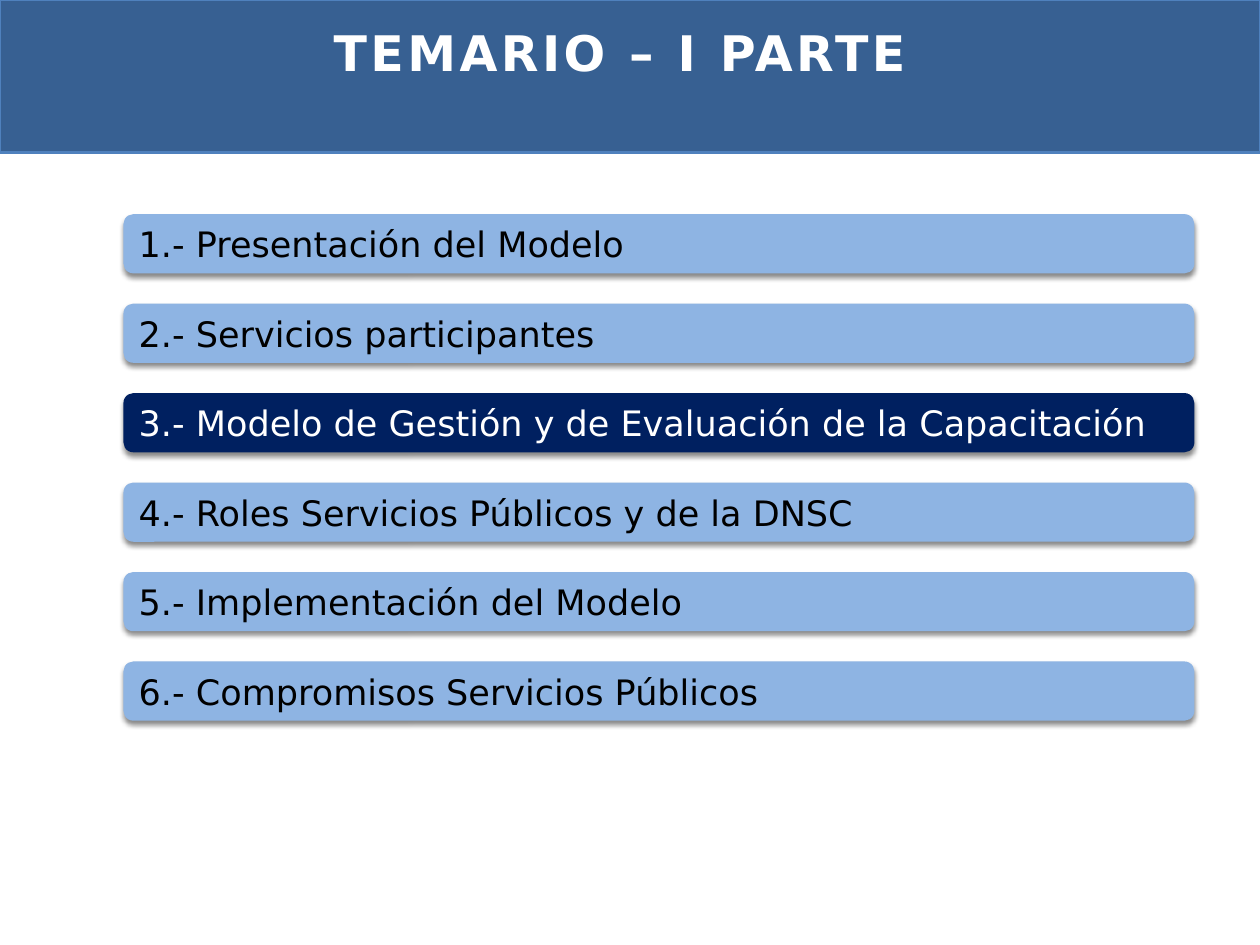
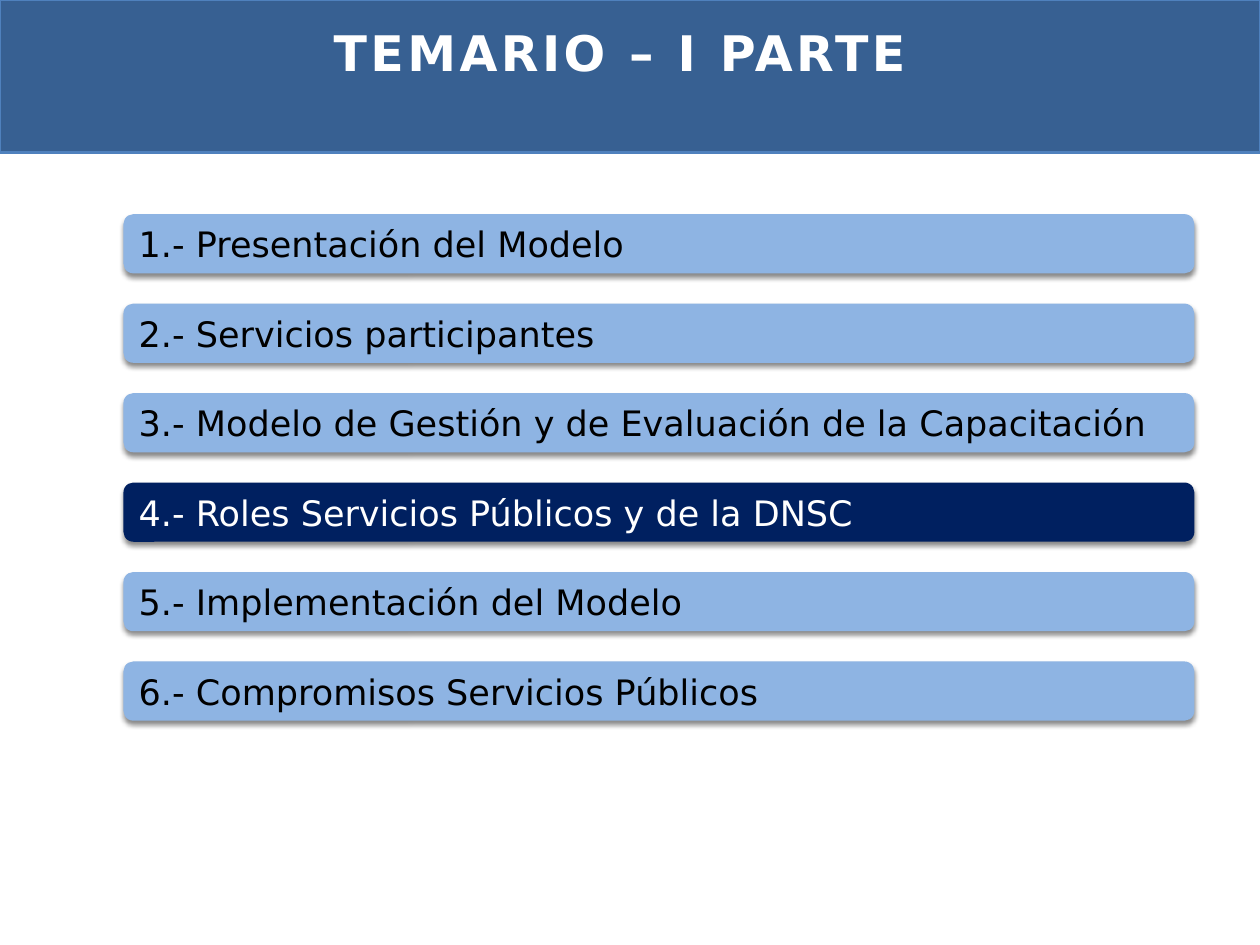
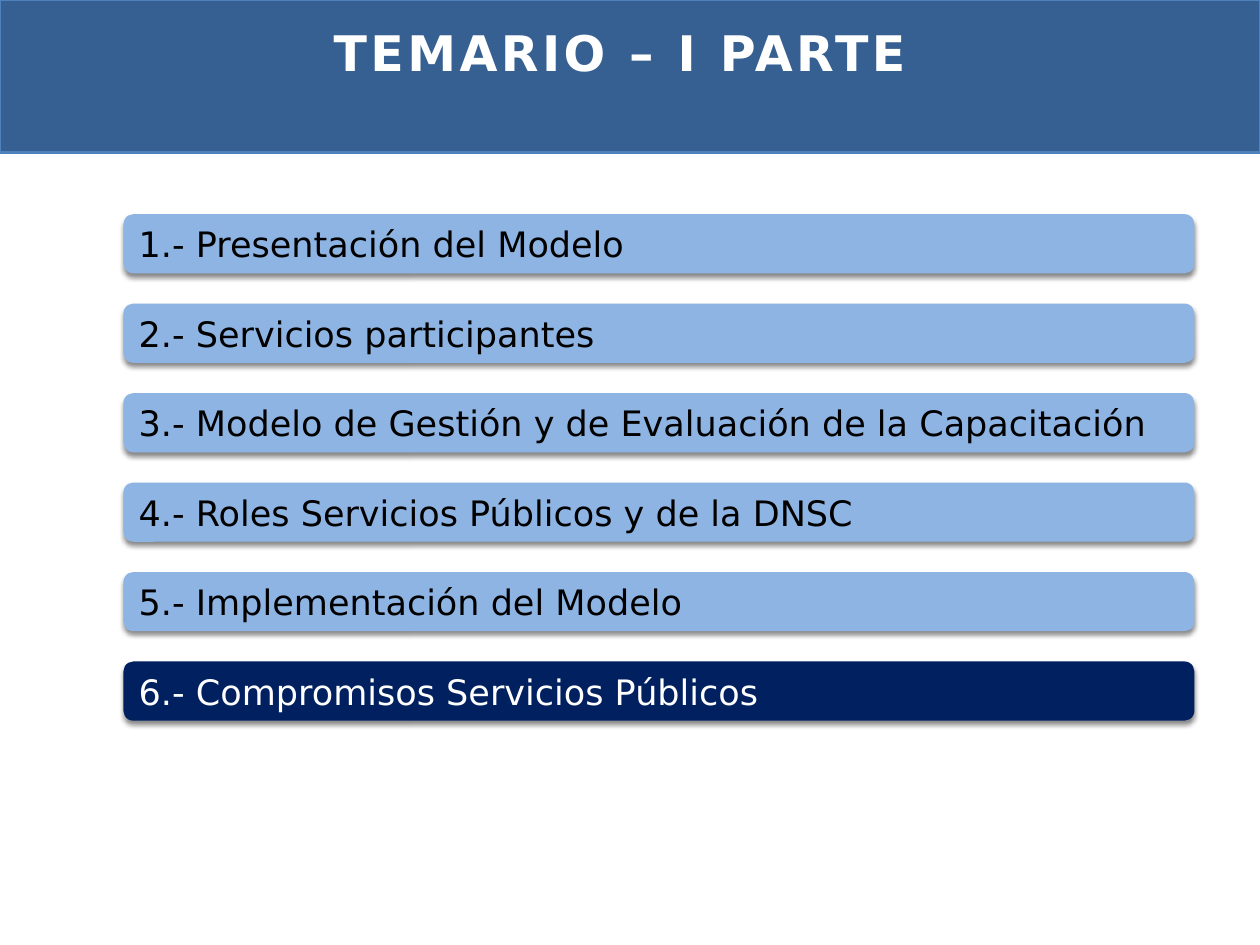
import pptx
import pptx.util
from lxml import etree
from pptx.dml.color import RGBColor
from pptx.enum.shapes import MSO_SHAPE
from pptx.enum.text import MSO_ANCHOR, PP_ALIGN
from pptx.oxml.ns import qn
from pptx.util import Inches, Pt

COLOURS = {
    "band": "376092",
    "band_edge": "4F81BD",
    "topic": "8EB4E3",
    "current": "002060",
    "dark_text": "000000",
    "light_text": "FFFFFF",
    "shadow": "000000",
}
FONT = "DejaVu Sans"
SLIDE_WIDTH, SLIDE_HEIGHT = 10, 7.5
BAND_HEIGHT = 1.21
TOPIC_LEFT, TOPIC_WIDTH, TOPIC_HEIGHT = 0.98, 8.5, 0.47
FIRST_TOPIC_TOP, TOPIC_PITCH = 1.7, 0.71

HEADING = "TEMARIO – I PARTE"
TOPICS = [
    "Presentación del Modelo",
    "Servicios participantes",
    "Modelo de Gestión y de Evaluación de la Capacitación",
    "Roles Servicios Públicos y de la DNSC",
    "Implementación del Modelo",
    "Compromisos Servicios Públicos",
]
CURRENT_TOPICS = [3, 4, 6]


def colour(key):
    return RGBColor.from_string(COLOURS[key])


def style_paragraph(paragraph, size, colour_key, align, bold=False):
    paragraph.alignment = align
    font = paragraph.font
    font.name, font.size, font.bold = FONT, Pt(size), bold
    font.color.rgb = colour(colour_key)


def add_filled_shape(slide, preset, box, fill_key):
    shape = slide.shapes.add_shape(preset, *map(Inches, box))
    shape.shadow.inherit = False
    shape.fill.solid()
    shape.fill.fore_color.rgb = colour(fill_key)
    return shape


def add_drop_shadow(shape):
    effects = shape.element.spPr.find(qn("a:effectLst"))
    shadow = etree.SubElement(
        effects, qn("a:outerShdw"), blurRad=str(Pt(3)), dist=str(Pt(2)),
        dir="5400000", rotWithShape="0")
    tint = etree.SubElement(shadow, qn("a:srgbClr"), val=COLOURS["shadow"])
    etree.SubElement(tint, qn("a:alpha"), val="45000")


def add_heading(slide):
    """Put the title over a full-width band."""
    title = slide.shapes.title
    band = add_filled_shape(
        slide, MSO_SHAPE.RECTANGLE, (0, 0, SLIDE_WIDTH, BAND_HEIGHT), "band")
    band.line.color.rgb = colour("band_edge")
    band.line.width = Pt(1.5)
    title.element.addprevious(band.element)

    title.left, title.top = Inches(0.51), Inches(0.13)
    title.width, title.height = Inches(8.82), Inches(1.25)
    title.text_frame.text = HEADING
    title.text_frame.vertical_anchor = MSO_ANCHOR.TOP
    paragraph = title.text_frame.paragraphs[0]
    style_paragraph(paragraph, 28, "light_text", PP_ALIGN.CENTER, bold=True)
    paragraph.runs[0].font._element.set("spc", "200")


def add_topic(slide, number, topic, is_current):
    top = FIRST_TOPIC_TOP + (number - 1) * TOPIC_PITCH
    bar = add_filled_shape(
        slide, MSO_SHAPE.ROUNDED_RECTANGLE,
        (TOPIC_LEFT, top, TOPIC_WIDTH, TOPIC_HEIGHT),
        "current" if is_current else "topic")
    bar.line.fill.background()
    add_drop_shadow(bar)
    bar.text_frame.text = f"{number}.- {topic}"
    bar.text_frame.vertical_anchor = MSO_ANCHOR.MIDDLE
    style_paragraph(bar.text_frame.paragraphs[0], 20,
                    "light_text" if is_current else "dark_text", PP_ALIGN.LEFT)


def add_agenda_slide(deck, current):
    slide = deck.slides.add_slide(deck.slide_layouts.get_by_name("Title Only"))
    add_heading(slide)
    for number, topic in enumerate(TOPICS, start=1):
        add_topic(slide, number, topic, number == current)


def main():
    deck = pptx.Presentation()
    deck.slide_width, deck.slide_height = Inches(SLIDE_WIDTH), Inches(SLIDE_HEIGHT)
    for current in CURRENT_TOPICS:
        add_agenda_slide(deck, current)
    deck.save("out.pptx")


if __name__ == "__main__":
    main()
